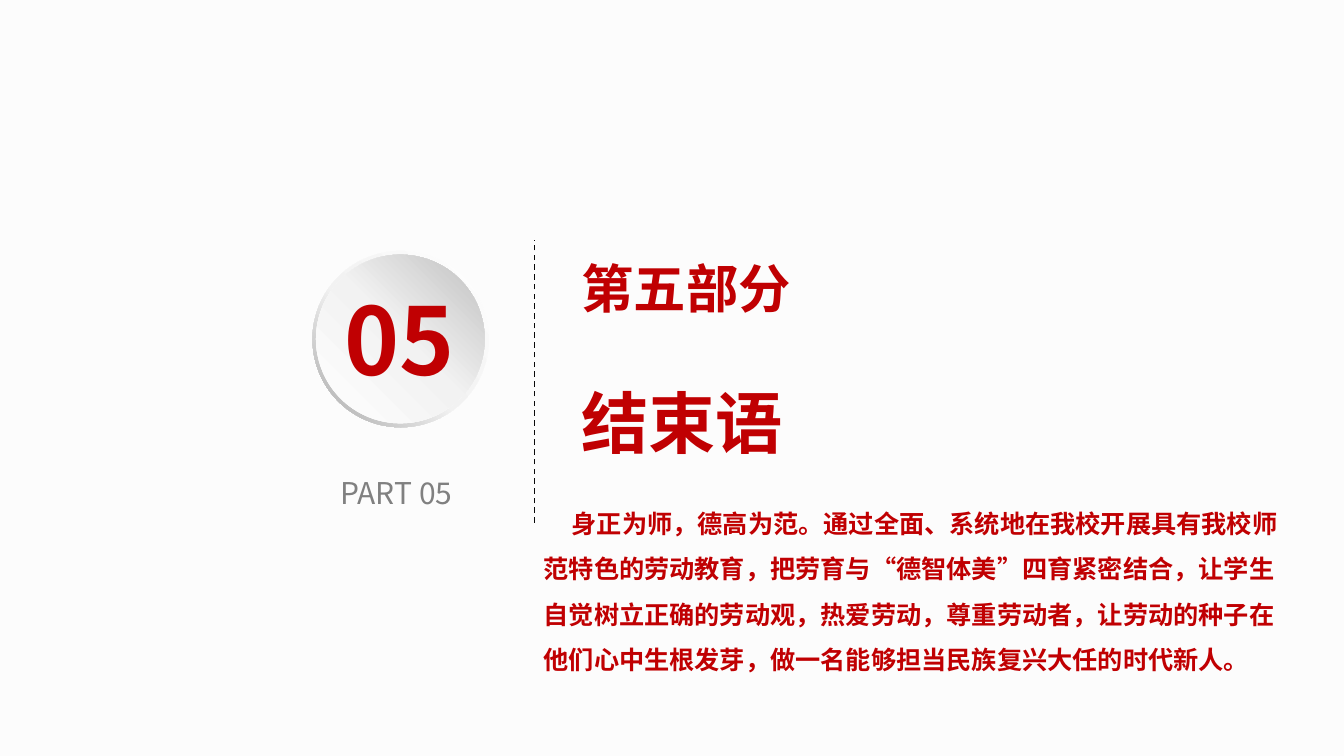
from copy import deepcopy
from pptx import Presentation
from pptx.dml.color import RGBColor
from pptx.enum.dml import MSO_LINE
from pptx.enum.shapes import MSO_CONNECTOR, MSO_SHAPE
from pptx.oxml.ns import qn
from pptx.util import Pt
from lxml.etree import SubElement

RED = RGBColor(0xC0, 0x00, 0x02)
GRAY = RGBColor(0x80, 0x80, 0x80)
INK = RGBColor(0x08, 0x08, 0x08)
PAPER = RGBColor(0xFC, 0xFC, 0xFC)
WHITE = RGBColor(0xFF, 0xFF, 0xFF)
PALE = RGBColor(0xF2, 0xF2, 0xF2)
SILVER = RGBColor(0xBF, 0xBF, 0xBF)
STEEL = RGBColor(0xA6, 0xA6, 0xA6)
FACE = "Noto Sans CJK SC"
BODY = "身正为师，德高为范。通过全面、系统地在我校开展具有我校师范特色的劳动教育，把劳育与“德智体美”四育紧密结合，让学生自觉树立正确的劳动观，热爱劳动，尊重劳动者，让劳动的种子在他们心中生根发芽，做一名能够担当民族复兴大任的时代新人。"


def write(slide, box, lines, color, bold=True, space=1.0, gap=0, indent=0):
    frame = slide.shapes.add_textbox(*map(Pt, box)).text_frame
    frame.word_wrap = True
    frame.margin_left = frame.margin_right = 0
    frame.margin_top = frame.margin_bottom = 0
    for i, (text, size) in enumerate(lines):
        para = frame.add_paragraph() if i else frame.paragraphs[0]
        para.text = text
        para.line_spacing = space
        if i:
            para.space_before = Pt(gap)
        if indent:
            para._p.get_or_add_pPr().set("indent", str(Pt(indent)))
        font = para.font
        font.name, font.size, font.bold = FACE, Pt(size), bold
        font.color.rgb = color
        SubElement(font._element, qn("a:ea")).set("typeface", FACE)


def disc(slide, kind, box, stops, angle):
    shape = slide.shapes.add_shape(kind, *map(Pt, box))
    shape.shadow.inherit = False
    shape.line.fill.background()
    fill = shape.fill
    fill.gradient()
    fill.gradient_angle = angle
    ramp = shape._element.spPr.find(".//" + qn("a:gsLst"))
    ramp.append(deepcopy(ramp[0]))
    for stop, (place, color) in zip(fill.gradient_stops, stops):
        stop.position = place
        stop.color.rgb = color
    return shape


def badge(slide, left, top, size):
    ring = disc(slide, MSO_SHAPE.DONUT, (left, top, size, size),
                [(0, WHITE), (0.55, PALE), (1, STEEL)], 225)
    ring.adjustments[0] = 0.049
    inner = size - 5.5
    disc(slide, MSO_SHAPE.OVAL, (left + 2.5, top + 2.7, inner, inner),
         [(0, WHITE), (0.51, PALE), (1, SILVER)], 45)
    write(slide, (left + 23, top + 22.5, 95, 80), [("05", 66.7)], RED)
    write(slide, (left + 20, top + 160, 95, 26), [("PART 05", 21.4)], GRAY, False)


def rule(slide, left, top, height):
    line = slide.shapes.add_connector(
        MSO_CONNECTOR.STRAIGHT, Pt(left), Pt(top + height), Pt(left), Pt(top))
    line.line.color.rgb = INK
    line.line.width = Pt(1)
    line.line.dash_style = MSO_LINE.DASH
    SubElement(line._element.spPr, qn("a:effectLst"))


def closing(slide, left, top):
    write(slide, (left + 33.8, top + 10.7, 160, 150),
          [("第五部分", 37.4), ("结束语", 48)], RED, gap=45)
    write(slide, (left + 6.7, top + 180.2, 525, 130),
          [(BODY, 18)], RED, space=1.5, indent=20)


def main():
    deck = Presentation()
    deck.slide_width, deck.slide_height = Pt(960), Pt(540)
    slide = deck.slides.add_slide(deck.slide_layouts[6])
    slide.background.fill.solid()
    slide.background.fill.fore_color.rgb = PAPER
    rule(slide, 381.6, 171.8, 201.6)
    badge(slide, 223.2, 179.2, 126)
    closing(slide, 381.6, 172)
    deck.save("out.pptx")


if __name__ == "__main__":
    main()
